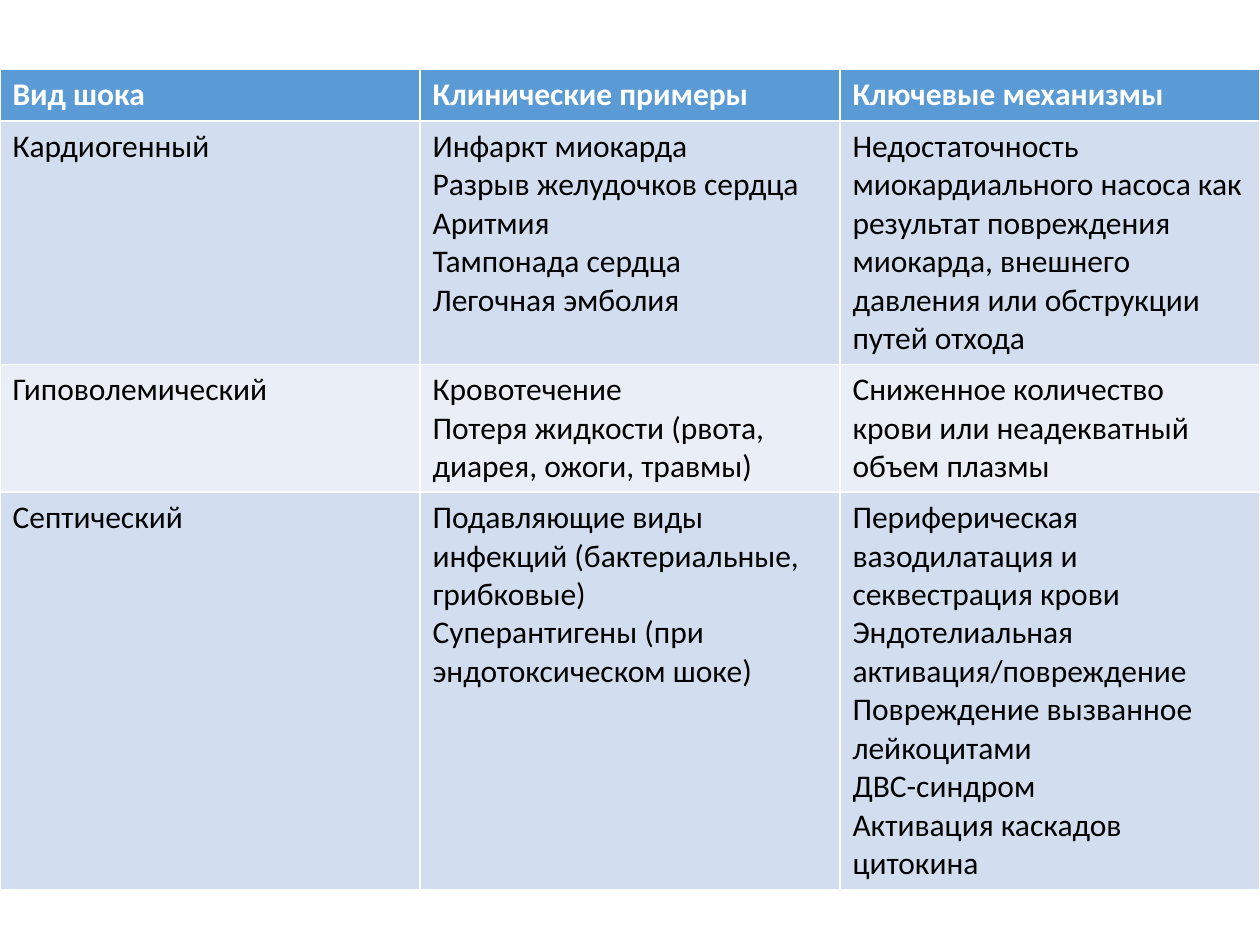
from pptx import Presentation
from pptx.dml.color import RGBColor
from pptx.util import Inches, Pt


def color(value):
    return RGBColor.from_string(value)


rows = [
    ("Вид шока", "Клинические примеры", "Ключевые механизмы"),
    (
        "Кардиогенный",
        "Инфаркт миокарда\nРазрыв желудочков сердца\nАритмия\nТампонада сердца\nЛегочная эмболия",
        "Недостаточность миокардиального насоса как результат повреждения миокарда, "
        "внешнего давления или обструкции путей отхода",
    ),
    (
        "Гиповолемический",
        "Кровотечение\nПотеря жидкости (рвота, диарея, ожоги, травмы)",
        "Сниженное количество крови или неадекватный объем плазмы",
    ),
    (
        "Септический",
        "Подавляющие виды инфекций (бактериальные, грибковые)\n"
        "Суперантигены (при эндотоксическом шоке)",
        "Периферическая вазодилатация и секвестрация крови\n"
        "Эндотелиальная активация/повреждение\n"
        "Повреждение вызванное лейкоцитами\n"
        "ДВС-синдром\n"
        "Активация каскадов цитокина",
    ),
]
row_heights = [0.41, 1.9, 1, 3.1]
row_fills = ["5B9BD5", "D2DEEF", "EAEFF7", "D2DEEF"]

presentation = Presentation()
presentation.slide_width = Inches(10)
presentation.slide_height = Inches(7.5)
slide = presentation.slides.add_slide(presentation.slide_layouts[6])

table = slide.shapes.add_table(
    len(rows), len(rows[0]), Inches(0), Inches(0.55), Inches(10), Inches(sum(row_heights))
).table

for row_index, (texts, height, fill) in enumerate(zip(rows, row_heights, row_fills)):
    is_header = row_index == 0
    table.rows[row_index].height = Inches(height)
    for cell, text in zip(table.rows[row_index].cells, texts):
        cell.text = text
        cell.fill.solid()
        cell.fill.fore_color.rgb = color(fill)
        for paragraph in cell.text_frame.paragraphs:
            paragraph.font.name = "Calibri"
            paragraph.font.size = Pt(18)
            paragraph.font.bold = is_header
            paragraph.font.color.rgb = color("FFFFFF" if is_header else "000000")

presentation.save("out.pptx")
